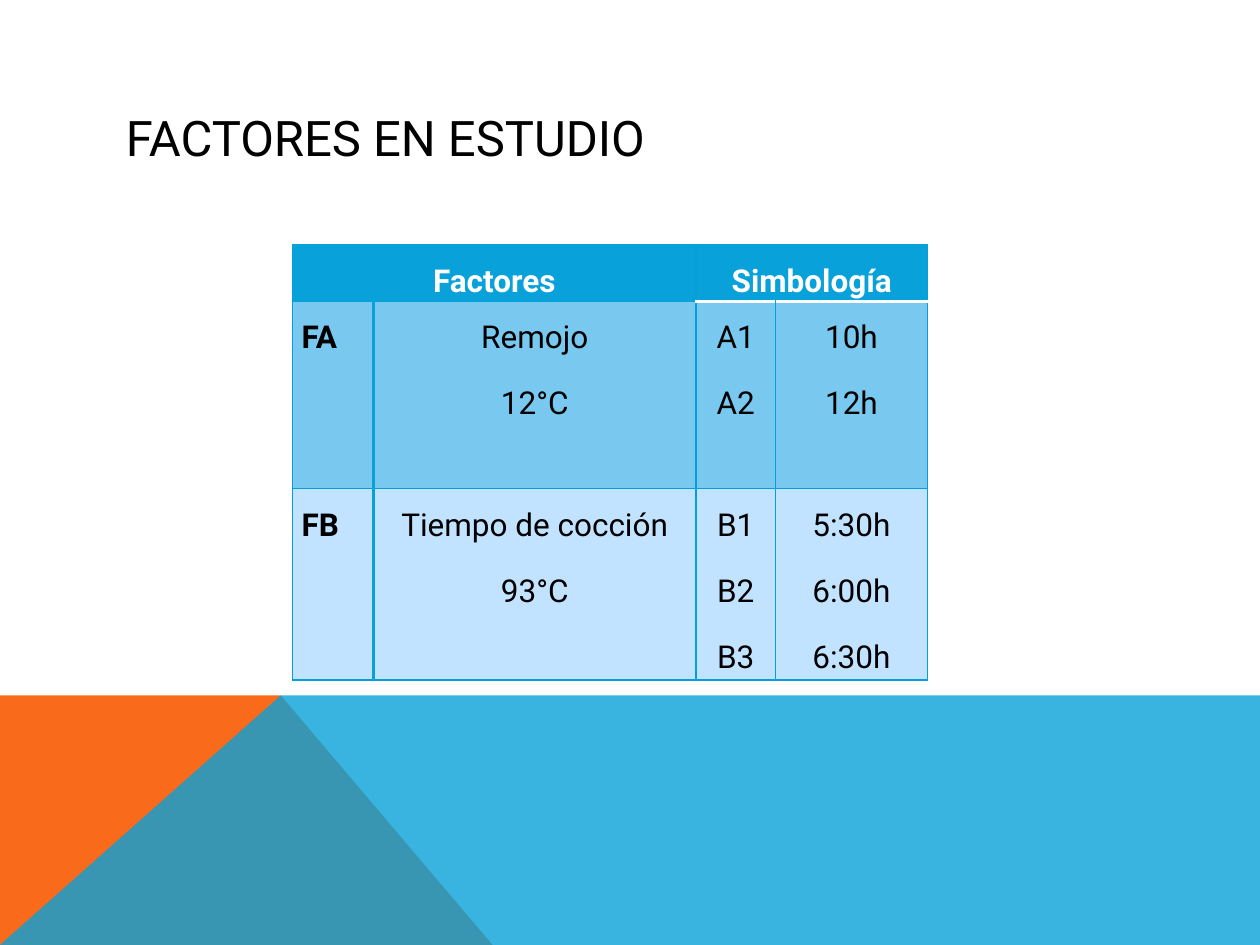
import lxml.etree
import pptx
import pptx.dml.color
import pptx.enum.text
import pptx.oxml.ns
import pptx.util

Cm, Pt = pptx.util.Cm, pptx.util.Pt
ALIGN = pptx.enum.text.PP_ALIGN

# Content
TITLE = "FACTORES EN ESTUDIO"
HEADINGS = [(0, "Factores"), (2, "Simbología")]  # each spans two columns
FACTORS = [
    [["FA"], ["Remojo", "12°C"], ["A1", "A2"], ["10h", "12h"]],
    [["FB"], ["Tiempo de cocción", "93°C"], ["B1", "B2", "B3"],
     ["5:30h", "6:00h", "6:30h"]],
]
OUTDENTED = {"6:30h": Cm(-0.3)}

THEME = {
    "font": "Roboto", "title_size": Pt(28), "table_size": Pt(18),
    "text": "000000", "heading_text": "FFFFFF",
    "orange": "F96A1B", "blue": "08A1D9", "border": "03A0D9",
    "rows": ["78C8F0", "C2E3FF"],
}
THIN, THICK = Pt(0.75), Pt(2)

# Layout in cm
SLIDE_W, SLIDE_H = 25.4, 19.05
BAND_TOP, PEAK_X, FOOT_X = 14.02, 5.66, 9.93
COLUMN_WIDTHS = [1.63, 6.5, 1.6, 3.07]
ROW_HEIGHTS = [1.09, 3.78, 3.78]
TABLE_LEFT, TABLE_TOP = 5.9, 4.93


def rgb(colour):
    return pptx.dml.color.RGBColor.from_string(colour)


def add_polygon(slide, points, colour, opacity=100):
    corners = [(Cm(x), Cm(y)) for x, y in points]
    builder = slide.shapes.build_freeform(*corners[0])
    builder.add_line_segments(corners[1:], close=True)
    polygon = builder.convert_to_shape()
    polygon.shadow.inherit = False
    polygon.line.fill.background()
    polygon.fill.solid()
    polygon.fill.fore_color.rgb = rgb(colour)
    if opacity < 100:
        fill_colour = polygon.fill._xPr.find(".//" + pptx.oxml.ns.qn("a:srgbClr"))
        lxml.etree.SubElement(fill_colour, pptx.oxml.ns.qn("a:alpha"),
                              val=str(opacity * 1000))


def add_text(paragraph, words, size, colour, bold=False):
    run = paragraph.add_run()
    run.text = words
    run.font.name, run.font.size, run.font.bold = THEME["font"], size, bold
    run.font.color.rgb = rgb(colour)


def set_border(cell, side, colour, width):
    qn = pptx.oxml.ns.qn
    edge = lxml.etree.SubElement(cell._tc.get_or_add_tcPr(), qn("a:ln" + side),
                                 w=str(int(width)))
    fill = lxml.etree.SubElement(edge, qn("a:solidFill"))
    lxml.etree.SubElement(fill, qn("a:srgbClr"), val=colour)


def style_cell(cell, row, column):
    cell.margin_left = cell.margin_right = Cm(0.18)
    cell.margin_top = cell.margin_bottom = 0
    borders = {side: (THEME["border"], THIN) for side in "LRTB"}
    if row > 0 and column < 2:  # thick line right of the factor codes
        borders["R" if column == 0 else "L"] = (THEME["blue"], THICK)
    if row < 2 and column >= 2:  # white line under the second heading
        borders["B" if row == 0 else "T"] = (THEME["heading_text"], THICK)
    for side, (colour, width) in borders.items():
        set_border(cell, side, colour, width)
    cell.fill.solid()
    cell.fill.fore_color.rgb = rgb(THEME["rows"][row - 1] if row else THEME["blue"])


def write_cell(cell, lines, colour, bold=False, align=ALIGN.CENTER):
    frame = cell.text_frame
    for number, words in enumerate(lines):
        paragraph = frame.add_paragraph() if number else frame.paragraphs[0]
        paragraph.alignment = align
        paragraph.line_spacing = 1.5
        paragraph.space_before = Pt(6)
        if words in OUTDENTED:
            paragraph._p.get_or_add_pPr().set("indent", str(int(OUTDENTED[words])))
        add_text(paragraph, words, THEME["table_size"], colour, bold)


def main():
    deck = pptx.Presentation()
    deck.slide_width, deck.slide_height = Cm(SLIDE_W), Cm(SLIDE_H)
    slide = deck.slides.add_slide(deck.slide_layouts[6])

    # Coloured base
    add_polygon(slide, [(0, SLIDE_H), (0, BAND_TOP), (PEAK_X, BAND_TOP),
                        (FOOT_X, SLIDE_H)], THEME["orange"])
    add_polygon(slide, [(0, SLIDE_H), (PEAK_X, BAND_TOP), (SLIDE_W, BAND_TOP),
                        (SLIDE_W, SLIDE_H)], THEME["blue"], opacity=80)

    # Title
    title = slide.shapes.add_textbox(Cm(2.29), Cm(2.01), Cm(20.88), Cm(1.52)).text_frame
    title.word_wrap = True
    title.vertical_anchor = pptx.enum.text.MSO_ANCHOR.MIDDLE
    add_text(title.paragraphs[0], TITLE, THEME["title_size"], THEME["text"])

    # Table of factors
    table = slide.shapes.add_table(
        len(ROW_HEIGHTS), len(COLUMN_WIDTHS), Cm(TABLE_LEFT), Cm(TABLE_TOP),
        Cm(sum(COLUMN_WIDTHS)), Cm(sum(ROW_HEIGHTS))).table
    table.first_row = table.horz_banding = False
    for column, width in zip(table.columns, COLUMN_WIDTHS):
        column.width = Cm(width)
    for row, height in zip(table.rows, ROW_HEIGHTS):
        row.height = Cm(height)
    for row in range(len(ROW_HEIGHTS)):
        for column in range(len(COLUMN_WIDTHS)):
            style_cell(table.cell(row, column), row, column)
    for column, heading in HEADINGS:
        table.cell(0, column).merge(table.cell(0, column + 1))
        write_cell(table.cell(0, column), [heading], THEME["heading_text"], bold=True)
    for row, factor in enumerate(FACTORS, start=1):
        for column, lines in enumerate(factor):
            is_code = column == 0
            write_cell(table.cell(row, column), lines, THEME["text"], bold=is_code,
                       align=ALIGN.JUSTIFY if is_code else ALIGN.CENTER)

    deck.save("out.pptx")


if __name__ == "__main__":
    main()
